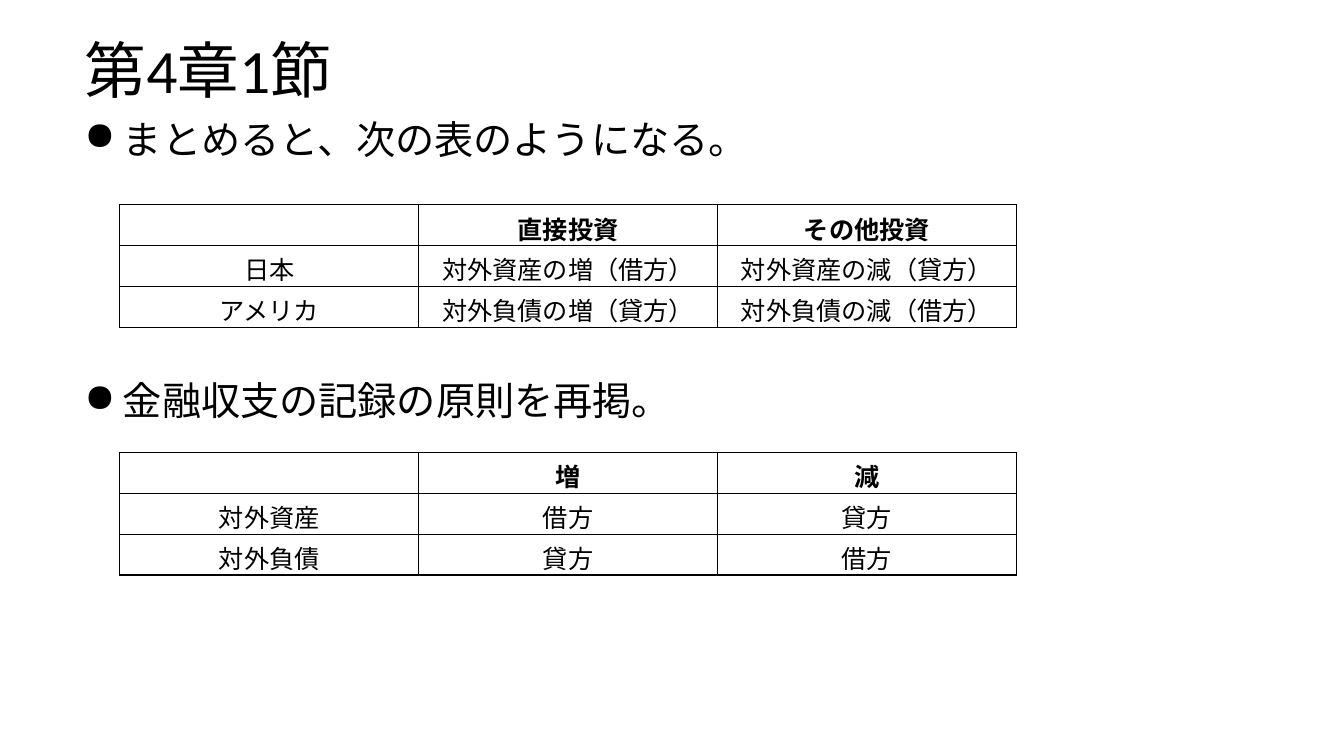
from pptx import Presentation
from pptx.dml.color import RGBColor
from pptx.enum.lang import MSO_LANGUAGE_ID
from pptx.enum.text import MSO_ANCHOR, PP_ALIGN
from pptx.oxml import parse_xml
from pptx.oxml.ns import nsdecls
from pptx.util import Cm, Pt

TITLE = "第4章1節"
BULLETS = [
    ("まとめると、次の表のようになる。", 0),
    ("金融収支の記録の原則を再掲。", 153),
]
TABLES = [
    (5.16, [
        ("", "直接投資", "その他投資"),
        ("日本", "対外資産の増（借方）", "対外資産の減（貸方）"),
        ("アメリカ", "対外負債の増（貸方）", "対外負債の減（借方）"),
    ]),
    (11.4, [
        ("", "増", "減"),
        ("対外資産", "借方", "貸方"),
        ("対外負債", "貸方", "借方"),
    ]),
]

BLACK = "000000"
FONT = "Calibri"
LEFT, CENTER = PP_ALIGN.LEFT, PP_ALIGN.CENTER
MIDDLE = MSO_ANCHOR.MIDDLE
JAPANESE = MSO_LANGUAGE_ID.JAPANESE
TABLE_LEFT, COLUMN_WIDTH, ROW_HEIGHT = 3.02, 7.53, 1.03
BULLET_INDENT = Cm(0.97)


def color(hex_text):
    return RGBColor.from_string(hex_text)


def write(para, text, size, bold=False, align=LEFT, before=0, spacing=1.0):
    para.alignment = align
    para.space_before = Pt(before)
    para.line_spacing = spacing
    span = para.add_run()
    span.text = text
    font = span.font
    font.name, font.size, font.bold = FONT, Pt(size), bold
    font.color.rgb = color(BLACK)
    font.language_id = JAPANESE


def add_bullet(para):
    properties = para._p.get_or_add_pPr()
    properties.set("marL", str(BULLET_INDENT))
    properties.set("indent", str(-BULLET_INDENT))
    properties.append(parse_xml(f'<a:buChar {nsdecls("a")} char="●"/>'))


def add_borders(cell):
    properties = cell._tc.get_or_add_tcPr()
    for side in ("lnL", "lnR", "lnT", "lnB"):
        properties.append(parse_xml(
            f'<a:{side} {nsdecls("a")} w="{Pt(1)}"><a:solidFill>'
            f'<a:srgbClr val="{BLACK}"/></a:solidFill></a:{side}>'))


def add_grid(page, top, rows):
    columns = len(rows[0])
    table = page.shapes.add_table(
        len(rows), columns, Cm(TABLE_LEFT), Cm(top),
        Cm(COLUMN_WIDTH * columns), Cm(ROW_HEIGHT * len(rows))).table
    table.horz_banding = False
    for row_index, row in enumerate(rows):
        for column_index, text in enumerate(row):
            cell = table.cell(row_index, column_index)
            add_borders(cell)
            cell.fill.background()
            if text:
                write(cell.text_frame.paragraphs[0], text, 18,
                      bold=row_index == 0, align=CENTER)


def main():
    deck = Presentation()
    deck.slide_width, deck.slide_height = Cm(33.87), Cm(19.05)
    page = deck.slides.add_slide(deck.slide_layouts[5])

    title = page.shapes.title
    title.left, title.top, title.width, title.height = Cm(1.88), Cm(0.86), Cm(29.51), Cm(2.01)
    title.text_frame.vertical_anchor = MIDDLE
    write(title.text_frame.paragraphs[0], TITLE, 44, spacing=0.9)

    box = page.shapes.add_textbox(Cm(1.88), Cm(2.9), Cm(29.72), Cm(12.4))
    frame = box.text_frame
    frame.word_wrap = True
    frame.margin_top = frame.margin_bottom = 0
    for index, (text, before) in enumerate(BULLETS):
        para = frame.add_paragraph() if index else frame.paragraphs[0]
        write(para, text, 28, before=before)
        add_bullet(para)

    for top, rows in TABLES:
        add_grid(page, top, rows)

    deck.save("out.pptx")


if __name__ == "__main__":
    main()
